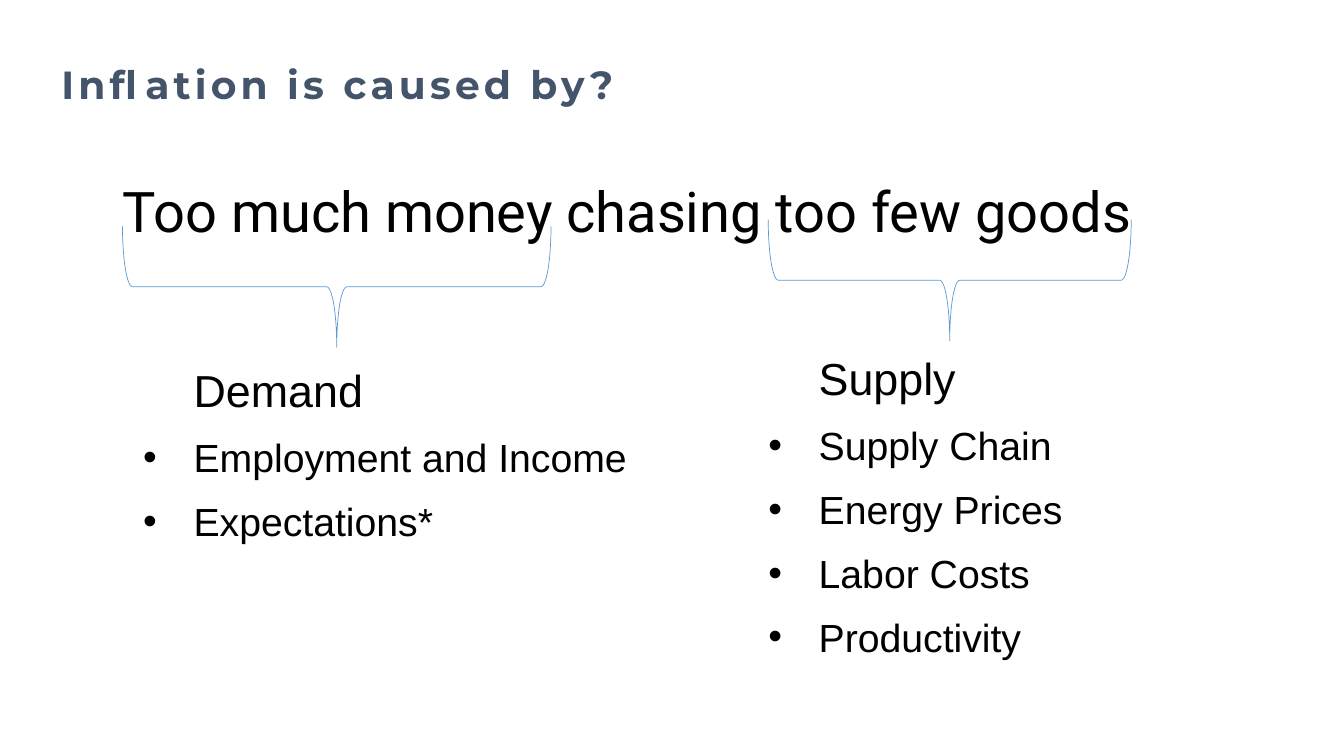
import pptx
import pptx.dml.color
import pptx.enum.shapes
import pptx.enum.text
import pptx.util
from lxml import etree
from pptx.oxml.ns import qn

Inches = pptx.util.Inches
Pt = pptx.util.Pt
RGBColor = pptx.dml.color.RGBColor

SLATE = RGBColor(0x44, 0x54, 0x6A)
BLACK = RGBColor(0, 0, 0)
BLUE = RGBColor(0x5B, 0x9B, 0xD5)

TITLE = "Inflation is caused by?"
STATEMENT = "Too much money chasing too few goods"
BRACES = [
    {"center": (3.34, 2.845), "span": 4.25},
    {"center": (9.42, 2.78), "span": 3.6},
]
CAUSES = [
    ("Demand", (1.42, 3.6, 5.05, 1.82),
     ["Employment and Income", "Expectations*"]),
    ("Supply", (7.62, 3.48, 3.9, 3.8),
     ["Supply Chain", "Energy Prices", "Labor Costs", "Productivity"]),
]
BRACE_DEPTH = 1.2
BULLET_INDENT = Inches(0.5)

prs = pptx.Presentation()
prs.slide_width = Inches(13.33)
prs.slide_height = Inches(7.5)
s = prs.slides.add_slide(prs.slide_layouts[6])


def add_box(box):
    tf = s.shapes.add_textbox(*map(Inches, box)).text_frame
    tf.word_wrap = True
    return tf


def add_text(p, text, font, size, color=BLACK, bold=False):
    r = p.add_run()
    r.text = text
    r.font.name = font
    r.font.size = Pt(size)
    r.font.bold = bold
    r.font.color.rgb = color
    return r


def add_bullet(p):
    pPr = p._p.get_or_add_pPr()
    pPr.set("marL", str(BULLET_INDENT))
    pPr.set("indent", str(-BULLET_INDENT))
    etree.SubElement(pPr, qn("a:buFont")).set("typeface", "Arial")
    etree.SubElement(pPr, qn("a:buChar")).set("char", "•")


tf = add_box((0.51, 0.53, 12.32, 0.67))
tf.vertical_anchor = pptx.enum.text.MSO_ANCHOR.MIDDLE
p = tf.paragraphs[0]
p.line_spacing = 0.9
r = add_text(p, TITLE, "Montserrat", 28, SLATE, True)
r.font._element.set("spc", "300")

tf = add_box((1.12, 1.7, 10.4, 1.2))
add_text(tf.paragraphs[0], STATEMENT, "Roboto", 40)

for brace in BRACES:
    x, y = brace["center"]
    span = brace["span"]
    sp = s.shapes.add_shape(
        pptx.enum.shapes.MSO_SHAPE.LEFT_BRACE,
        Inches(x - BRACE_DEPTH / 2), Inches(y - span / 2),
        Inches(BRACE_DEPTH), Inches(span))
    sp.rotation = 270
    sp.shadow.inherit = False
    sp.fill.background()
    sp.line.color.rgb = BLUE
    sp.line.width = Pt(0.5)

for heading, box, items in CAUSES:
    tf = add_box(box)
    tf.margin_left = tf.margin_right = tf.margin_top = tf.margin_bottom = 0
    p = tf.paragraphs[0]
    p.space_after = Pt(12)
    add_text(p, "\t" + heading, "Arial", 32)
    for item in items:
        p = tf.add_paragraph()
        p.space_after = Pt(12)
        add_bullet(p)
        add_text(p, item, "Arial", 28)

prs.save("out.pptx")
